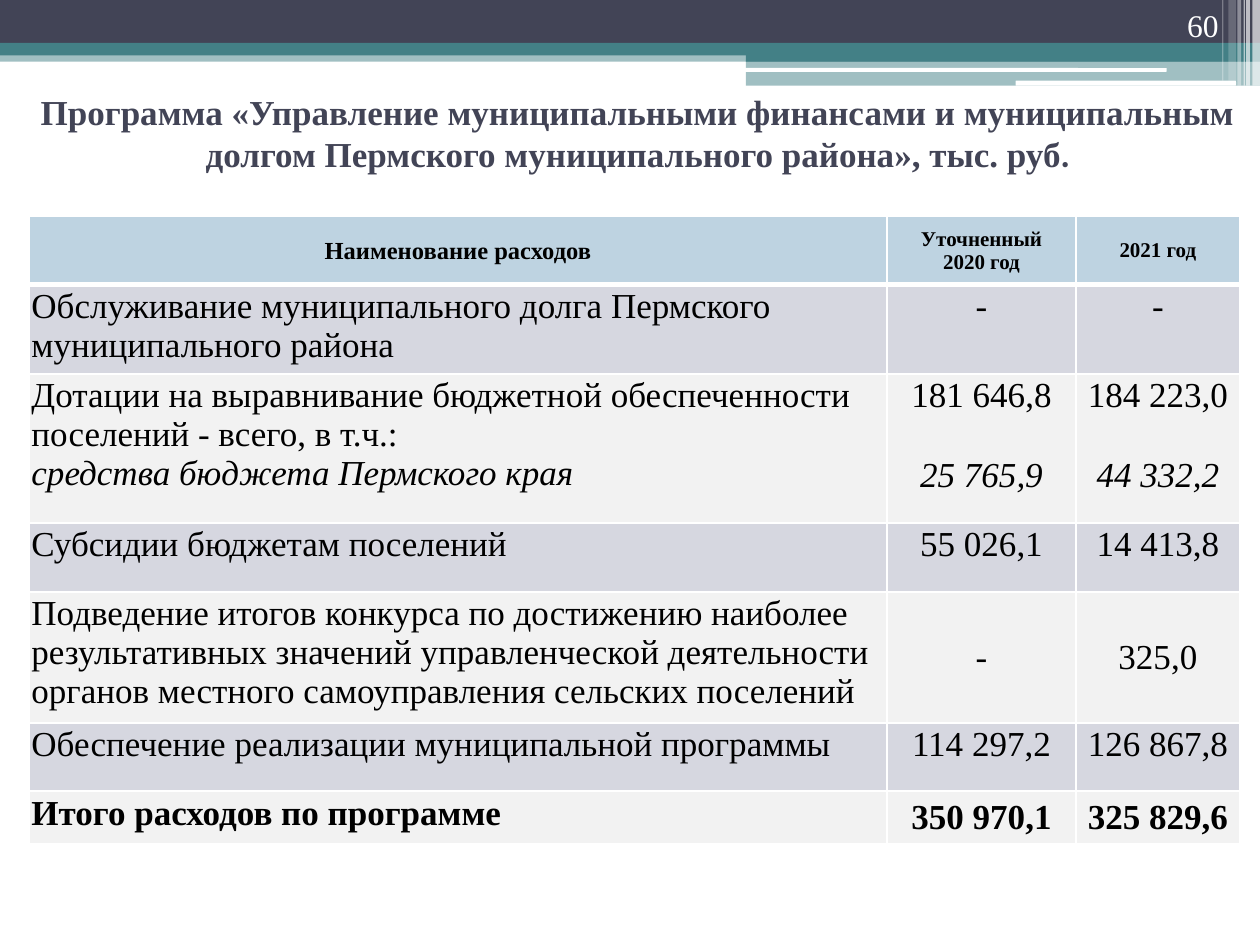
from lxml import etree
from pptx import Presentation
from pptx.dml.color import RGBColor
from pptx.enum.shapes import MSO_SHAPE
from pptx.enum.text import MSO_ANCHOR, PP_ALIGN
from pptx.oxml.ns import qn
from pptx.util import Inches, Pt

RECT, ROUND = MSO_SHAPE.RECTANGLE, MSO_SHAPE.ROUNDED_RECTANGLE
TOP, MIDDLE, BOTTOM = MSO_ANCHOR.TOP, MSO_ANCHOR.MIDDLE, MSO_ANCHOR.BOTTOM
LEFT, CENTER, RIGHT = PP_ALIGN.LEFT, PP_ALIGN.CENTER, PP_ALIGN.RIGHT
SERIF = "Times New Roman"
WHITE, BLACK, DARK, TEAL = "FFFFFF", "000000", "424456", "438086"
HEAD, ODD, EVEN = "BED3E1", "D6D7E0", "F2F2F2"
COLS = [6.81, 1.5, 1.3]
ROWS = [0.54, 0.71, 1.18, 0.55, 1.04, 0.54, 0.42]
TITLE = ("Программа «Управление муниципальными финансами и муниципальным "
         "долгом Пермского муниципального района», тыс. руб")
HEADS = ["Наименование расходов", "Уточненный 2020 год", "2021 год"]
ITEMS = [
    ["Обслуживание муниципального долга Пермского муниципального района",
     "-", "-"],
    ["Дотации на выравнивание бюджетной обеспеченности поселений - всего, "
     "в т.ч.:", "181 646,8", "184 223,0"],
    ["Субсидии бюджетам поселений", "55 026,1", "14 413,8"],
    ["Подведение итогов конкурса по достижению наиболее результативных "
     "значений управленческой деятельности органов местного самоуправления "
     "сельских поселений", "-", "325,0"],
    ["Обеспечение реализации муниципальной программы",
     "114 297,2", "126 867,8"],
    ["Итого расходов по программе", "350 970,1", "325 829,6"],
]
GRANT, CONTEST, TOTAL = 2, 4, 6
SHARE = ["средства бюджета Пермского края", "25 765,9", "44 332,2"]


def color(code):
    """Turn a hex string into a colour."""
    return RGBColor.from_string(code)


def write(para, text, size=20, fill=BLACK, face=SERIF, bold=False,
          slant=False, align=LEFT):
    """Add a formatted run to a paragraph."""
    para.alignment = align
    run = para.add_run()
    run.text = text
    font = run.font
    font.size, font.name, font.bold, font.italic = Pt(size), face, bold, slant
    font.color.rgb = color(fill)


def bar(slide, box, fill, alpha=100, kind=RECT):
    """Draw one plain bar of the banner."""
    shape = slide.shapes.add_shape(kind, *map(Inches, box))
    shape.shadow.inherit = False
    shape.fill.solid()
    shape.fill.fore_color.rgb = color(fill)
    shape.line.fill.background()
    if alpha < 100:
        tint = shape.fill._xPr.find(".//" + qn("a:srgbClr"))
        etree.SubElement(tint, qn("a:alpha"), val=str(alpha * 1000))


def banner(slide, left, top, width):
    """Draw the top bands, the two slots and the fading right edge."""
    half = left + width - 4.08
    right = left + width
    bar(slide, (left, top + 0.4, width, 0.09), TEAL, 50)
    bar(slide, (left, top, width, 0.34), DARK)
    bar(slide, (left, top + 0.34, width, 0.1), TEAL)
    bar(slide, (half, top + 0.39, 4.08, 0.1), TEAL)
    bar(slide, (half, top + 0.48, 4.08, 0.2), TEAL, 50)
    bar(slide, (half - 0.01, top + 0.54, 3.35, 0.03), WHITE, kind=ROUND)
    bar(slide, (right - 1.94, top + 0.64, 1.75, 0.04), WHITE, kind=ROUND)
    for gap, wide, high, alpha in [
            (0.06, 0.06, 0.68, 65), (0.11, 0.03, 0.68, 65),
            (0.13, 0.01, 0.68, 60), (0.18, 0.03, 0.68, 40),
            (0.25, 0.06, 0.64, 20), (0.3, 0.01, 0.64, 30)]:
        bar(slide, (right - gap, top, wide, high), WHITE, alpha)


def label(slide, box, anchor):
    """Add a wrapping text box and return its first paragraph."""
    frame = slide.shapes.add_textbox(*map(Inches, box)).text_frame
    frame.word_wrap = True
    frame.vertical_anchor = anchor
    return frame.paragraphs[0]


def heading(slide, box):
    """Write the slide title."""
    para = label(slide, box, MIDDLE)
    style = dict(fill=DARK, bold=True, align=CENTER)
    write(para, TITLE, **style)
    write(para, ".", face="Lato", **style)


def number(slide, box):
    """Write the page number."""
    write(label(slide, box, BOTTOM), "60", size=18, fill=WHITE, align=RIGHT)


def dress(cell, fill, anchor, pads, upper=1, lower=1):
    """Set the borders, fill, anchor and margins of a cell."""
    props = cell._tc.get_or_add_tcPr()
    for side, width in zip("LRTB", (1, 1, upper, lower)):
        line = etree.SubElement(props, qn("a:ln" + side), w=str(Pt(width)))
        solid = etree.SubElement(line, qn("a:solidFill"))
        etree.SubElement(solid, qn("a:srgbClr"), val=WHITE)
    cell.fill.solid()
    cell.fill.fore_color.rgb = color(fill)
    cell.vertical_anchor = anchor
    cell.margin_left = cell.margin_right = Inches(pads[0])
    cell.margin_top = cell.margin_bottom = Inches(pads[1])


def budget(slide, left, top):
    """Build the table of expenses."""
    box = (left, top, sum(COLS), sum(ROWS))
    table = slide.shapes.add_table(
        len(ROWS), len(COLS), *map(Inches, box)).table
    for col, width in zip(table.columns, COLS):
        col.width = Inches(width)
    for row, height in zip(table.rows, ROWS):
        row.height = Inches(height)
    for c, text in enumerate(HEADS):
        cell = table.cell(0, c)
        dress(cell, HEAD, MIDDLE, (0.1, 0.05), lower=3)
        write(cell.text_frame.paragraphs[0], text, size=12 if c else 14,
              bold=True, align=CENTER)
    for r, item in enumerate(ITEMS, 1):
        for c, text in enumerate(item):
            cell = table.cell(r, c)
            anchor = MIDDLE if c and r in (CONTEST, TOTAL) else TOP
            align = CENTER if c else LEFT
            dress(cell, ODD if r % 2 else EVEN, anchor, (0.02, 0.02),
                  upper=3 if r == 1 else 1)
            frame = cell.text_frame
            write(frame.paragraphs[0], text, bold=r == TOTAL, align=align)
            if r == GRANT:
                para = frame.add_paragraph()
                para.space_before = Pt(23 if c else 0)
                write(para, SHARE[c], slant=True, align=align)


def main():
    """Build and save the slide."""
    deck = Presentation()
    deck.slide_width, deck.slide_height = Inches(10), Inches(7.5)
    slide = deck.slides.add_slide(deck.slide_layouts[6])
    banner(slide, 0, 0, 10)
    heading(slide, (0, 0.62, 10.12, 0.86))
    budget(slide, 0.23, 1.72)
    number(slide, (8.94, 0, 0.83, 0.4))
    deck.save("out.pptx")


if __name__ == "__main__":
    main()
